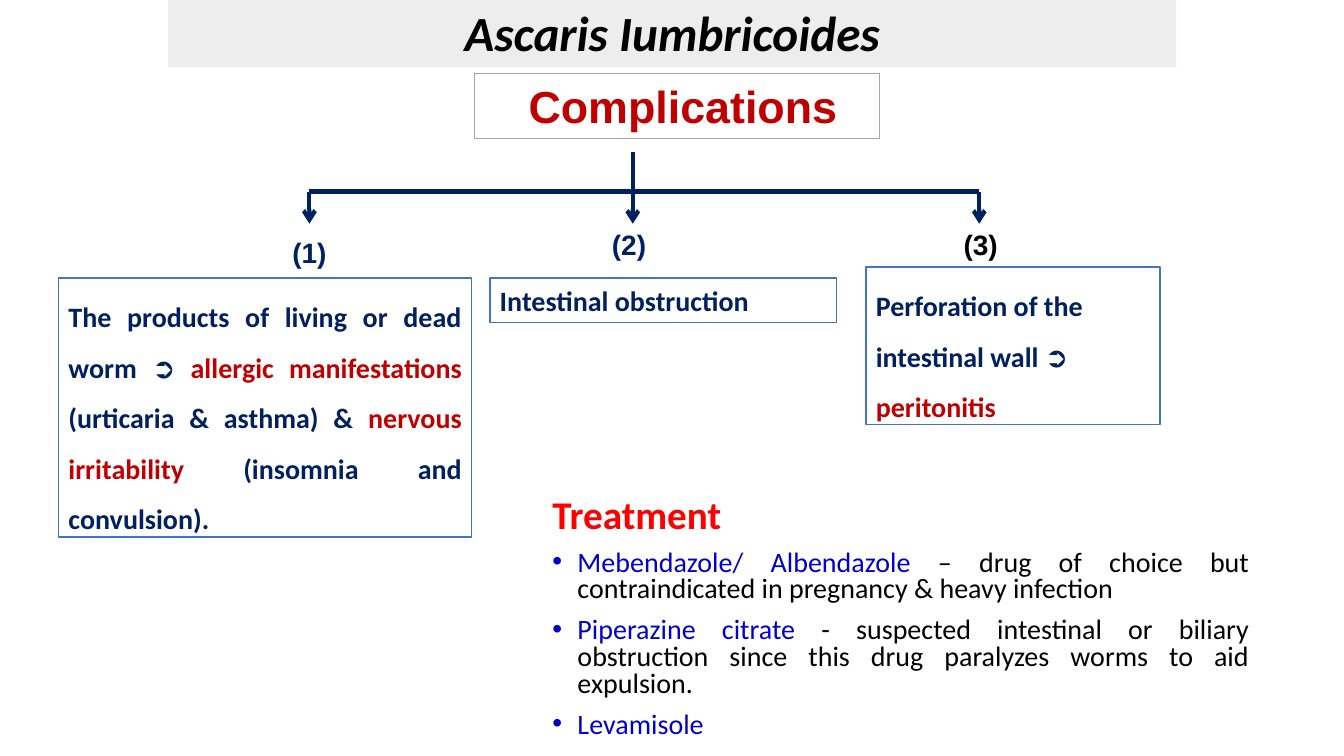
from dataclasses import dataclass

from lxml.etree import SubElement
from pptx import Presentation
from pptx.dml.color import RGBColor
from pptx.enum.shapes import MSO_CONNECTOR as Connector, MSO_SHAPE as Preset
from pptx.enum.text import MSO_ANCHOR as Anchor, PP_ALIGN as Align
from pptx.oxml.ns import qn
from pptx.slide import Slide
from pptx.text.text import _Paragraph as Paragraph
from pptx.util import Pt

NAVY = "002060"
CRIMSON = "C00000"
BLACK = "000000"
BLUE = "0000CC"
BORDER = "4472C4"


@dataclass(frozen=True)
class Segment:
    text: str
    color: str = NAVY


@dataclass(frozen=True)
class Line:
    segments: tuple[Segment, ...]
    size: float = 20
    font: str = "Calibri"
    bold: bool = True
    italic: bool = False
    align: Align = Align.LEFT
    spacing: float = 1.0
    before: float = 0
    bullet: bool = False


@dataclass(frozen=True)
class Panel:
    left: float
    top: float
    width: float
    height: float
    lines: tuple[Line, ...]
    fill: str = ""
    border: str = ""
    border_width: float = 1
    anchor: Anchor = Anchor.TOP
    inset: float = 7.2


@dataclass(frozen=True)
class Branch:
    x1: float
    y1: float
    x2: float
    y2: float
    arrow: bool = False


def rgb(color: str) -> RGBColor:
    return RGBColor.from_string(color)


def write_line(paragraph: Paragraph, line: Line) -> None:
    properties = paragraph._p.get_or_add_pPr()
    if line.bullet:
        properties.set("marL", str(Pt(18)))
        properties.set("indent", str(-Pt(18)))
        SubElement(properties, qn("a:buFont"), typeface="Arial")
        SubElement(properties, qn("a:buChar"), char="•")
    paragraph.alignment = line.align
    paragraph.line_spacing = line.spacing
    paragraph.space_before = Pt(line.before)
    paragraph.text = line.segments[0].text
    for segment in line.segments[1:]:
        paragraph.add_run().text = segment.text
    for run, segment in zip(paragraph.runs, line.segments):
        run.font.size = Pt(line.size)
        run.font.name = line.font
        run.font.bold = line.bold
        run.font.italic = line.italic
        run.font.color.rgb = rgb(segment.color)


def draw_panel(slide: Slide, panel: Panel) -> None:
    frame = [Pt(v) for v in (panel.left, panel.top, panel.width, panel.height)]
    if panel.fill or panel.border:
        box = slide.shapes.add_shape(Preset.RECTANGLE, *frame)
        box.shadow.inherit = False
    else:
        box = slide.shapes.add_textbox(*frame)
    if panel.fill:
        box.fill.solid()
        box.fill.fore_color.rgb = rgb(panel.fill)
    else:
        box.fill.background()
    if panel.border:
        box.line.color.rgb = rgb(panel.border)
        box.line.width = Pt(panel.border_width)
    else:
        box.line.fill.background()
    body = box.text_frame
    body.word_wrap = True
    body.vertical_anchor = panel.anchor
    body.margin_left = Pt(panel.inset)
    for index, line in enumerate(panel.lines):
        write_line(body.add_paragraph() if index else body.paragraphs[0], line)


def draw_branch(slide: Slide, branch: Branch) -> None:
    ends = [Pt(v) for v in (branch.x1, branch.y1, branch.x2, branch.y2)]
    connector = slide.shapes.add_connector(Connector.STRAIGHT, *ends)
    connector.line.color.rgb = rgb(NAVY)
    connector.line.width = Pt(3)
    if branch.arrow:
        SubElement(connector.line._get_or_add_ln(), qn("a:tailEnd"), type="arrow")
    SubElement(connector._element.spPr, qn("a:effectLst"))


def number(left: float, top: float, text: str, color: str = NAVY) -> Panel:
    line = Line((Segment(text, color),), font="Arial", align=Align.CENTER)
    return Panel(left, top, 44.6, 31.7, (line,))


def drug(name: str, note: str = "") -> Line:
    segments = (Segment(name, BLUE),) + ((Segment(note, BLACK),) if note else ())
    return Line(segments, bold=False, align=Align.JUSTIFY, spacing=0.8,
                before=10, bullet=True)


LEFT_X, MIDDLE_X, RIGHT_X = 221, 452, 699.5
TRUNK_Y, BAR_Y, TIP_Y = 108.7, 136.8, 159.8

BRANCHES = (
    Branch(MIDDLE_X, TRUNK_Y, MIDDLE_X, BAR_Y),
    Branch(MIDDLE_X, BAR_Y, RIGHT_X, BAR_Y),
    Branch(MIDDLE_X, BAR_Y, LEFT_X, BAR_Y),
    *(Branch(x, BAR_Y, x, TIP_Y, True) for x in (LEFT_X, MIDDLE_X, RIGHT_X)),
)

HEADING = Panel(339.1, 52.6, 288.7, 46.1, (
    Line((Segment("Complications", CRIMSON),), 32, "Arial", align=Align.CENTER),
), border="A5A5A5", border_width=0.5, inset=16)

ALLERGY = Panel(41.8, 198.7, 295.2, 185, (
    Line((
        Segment("The products of living or dead worm ➲ "),
        Segment("allergic manifestations ", CRIMSON),
        Segment("(urticaria & asthma) & "),
        Segment("nervous irritability ", CRIMSON),
        Segment("(insomnia and convulsion)."),
    ), align=Align.JUSTIFY, spacing=1.5),
), "FFFFFF", BORDER)

OBSTRUCTION = Panel(349.9, 198.7, 247.7, 31.7, (
    Line((Segment("Intestinal obstruction"),)),
), "FFFFFF", BORDER)

PERFORATION = Panel(618.5, 190.8, 210.2, 112.3, (
    Line((
        Segment("Perforation of the intestinal wall ➲ "),
        Segment("peritonitis", CRIMSON),
    ), spacing=1.5),
), "FFFFFF", BORDER)

TITLE = Panel(120.2, -2.2, 720, 50.4, (
    Line((Segment("Ascaris Iumbricoides", BLACK),), 35.1, italic=True,
         align=Align.CENTER),
), "EDEDED", anchor=Anchor.MIDDLE)

TREATMENT = Panel(387.4, 352.8, 511.9, 183.6, (
    Line((Segment("Treatment", "FF0000"),), 28, align=Align.JUSTIFY, spacing=0.8),
    drug("Mebendazole/ Albendazole",
         " – drug of choice but contraindicated in pregnancy & heavy infection"),
    drug("Piperazine citrate",
         " - suspected intestinal or biliary obstruction since this drug "
         "paralyzes worms to aid expulsion."),
    drug("Levamisole"),
))

NUMBERS = (
    number(198.7, 164.9, "(1)"),
    number(427, 159.1, "(2)"),
    number(678.2, 159.1, "(3)", BLACK),
)


def main() -> None:
    deck = Presentation()
    deck.slide_width, deck.slide_height = Pt(960), Pt(540)
    slide = deck.slides.add_slide(deck.slide_layouts[6])
    draw_panel(slide, HEADING)
    for branch in BRANCHES:
        draw_branch(slide, branch)
    for panel in (ALLERGY, OBSTRUCTION, PERFORATION, *NUMBERS, TITLE, TREATMENT):
        draw_panel(slide, panel)
    deck.save("out.pptx")


if __name__ == "__main__":
    main()
